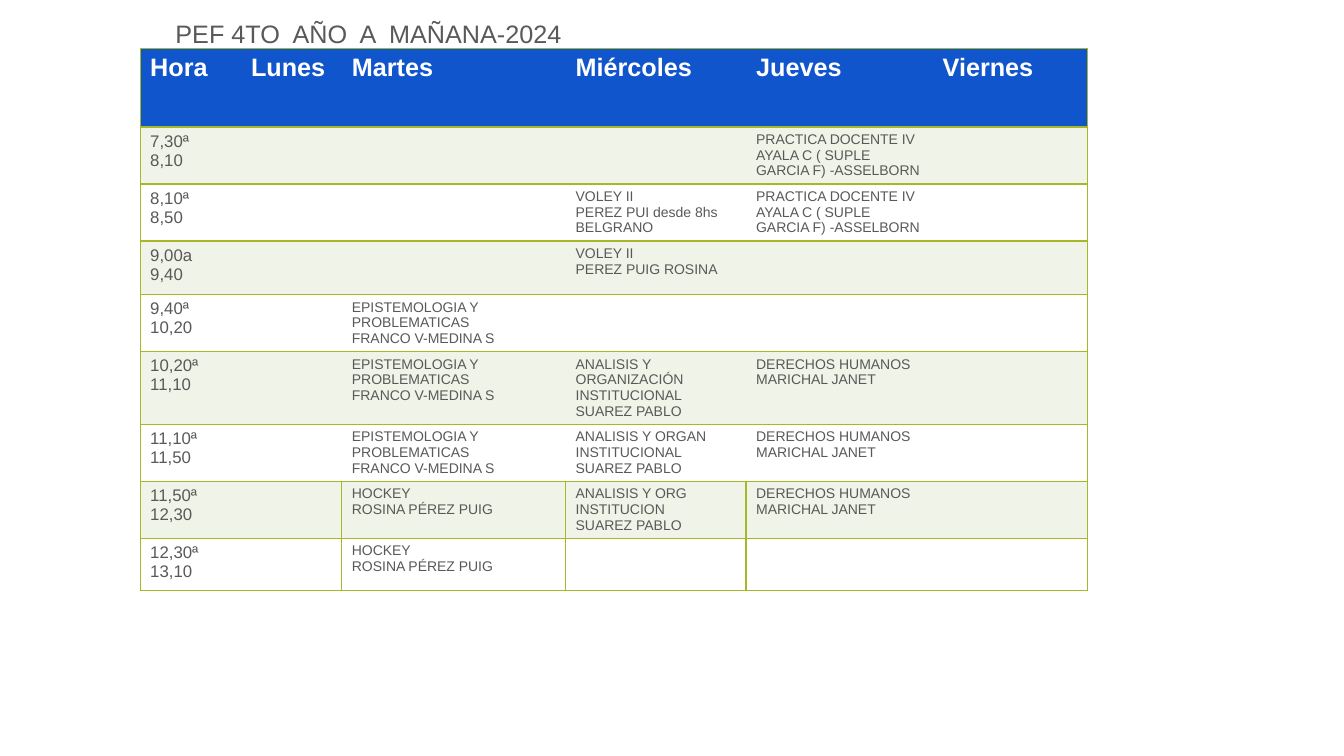
"""Build the weekly timetable slide of a fourth-year class."""
from dataclasses import dataclass

from lxml import etree
from pptx import Presentation
from pptx.dml.color import RGBColor
from pptx.enum.text import MSO_ANCHOR, MSO_AUTO_SIZE, PP_ALIGN
from pptx.oxml.ns import qn
from pptx.util import Inches, Pt

LEFT = PP_ALIGN.LEFT
BOTTOM = MSO_ANCHOR.BOTTOM
FIXED = MSO_AUTO_SIZE.NONE


@dataclass
class Theme:
    font: str = "Arial"
    ink: str = "595959"
    white: str = "FFFFFF"
    head: str = "1155CC"
    band: str = "F0F3E7"
    rule: str = "A6B727"
    large: int = 18
    hour: int = 12
    small: int = 10


class Page:
    def __init__(self, deck, theme):
        self.theme = theme
        self.slide = deck.slides.add_slide(deck.slide_layouts[5])

    def style(self, para, size, color, bold=False):
        para.alignment = LEFT
        font = para.font
        font.name = self.theme.font
        font.size = Pt(size)
        font.bold = bold
        font.color.rgb = RGBColor.from_string(color)

    def title(self, text, left, top, width, height):
        shape = self.slide.shapes.title
        shape.left, shape.top = Inches(left), Inches(top)
        shape.width, shape.height = Inches(width), Inches(height)
        frame = shape.text_frame
        frame.text = text
        frame.word_wrap = True
        frame.auto_size = FIXED
        frame.vertical_anchor = BOTTOM
        para = frame.paragraphs[0]
        para.line_spacing = 0.9
        self.style(para, self.theme.large, self.theme.ink)

    def edges(self, cell, shown):
        props = cell._tc.get_or_add_tcPr()
        for side in "LRTB":
            line = etree.SubElement(props, qn(f"a:ln{side}"), w=str(Pt(1)))
            if side in shown:
                fill = etree.SubElement(line, qn("a:solidFill"))
                etree.SubElement(fill, qn("a:srgbClr"), val=self.theme.rule)
            else:
                etree.SubElement(line, qn("a:noFill"))

    def cell(self, cell, text, size, color, fill, shown, bold):
        self.edges(cell, shown)
        cell.fill.solid()
        cell.fill.fore_color.rgb = RGBColor.from_string(fill)
        cell.text = text
        for para in cell.text_frame.paragraphs:
            self.style(para, size, color, bold)

    def table(self, rows, left, top, widths, heights):
        theme = self.theme
        frame = self.slide.shapes.add_table(
            len(rows), len(widths), Inches(left), Inches(top),
            Inches(sum(widths)), Inches(sum(heights)))
        grid = frame.table
        for col, width in zip(grid.columns, widths):
            col.width = Inches(width)
        for row, height in zip(grid.rows, heights):
            row.height = Inches(height)
        last = len(widths) - 1
        for i, row in enumerate(rows):
            head = i == 0
            fill = theme.head if head else theme.band if i % 2 else theme.white
            ruled = {0, last + 1}
            if i >= len(rows) - 2:
                ruled |= {2, 3, 4}
            for j, text in enumerate(row):
                shown = "TB" + "L" * (j in ruled) + "R" * (j + 1 in ruled)
                size = theme.large if head else theme.small if j else theme.hour
                color = theme.white if head else theme.ink
                self.cell(grid.cell(i, j), text, size, color, fill, shown, head)


DOCENTE = "PRACTICA DOCENTE IV\nAYALA C ( SUPLE GARCIA F) -ASSELBORN"
EPISTEM = "EPISTEMOLOGIA Y PROBLEMATICAS\nFRANCO V-MEDINA S"
RIGHTS = "DERECHOS HUMANOS\nMARICHAL JANET"
HOCKEY = "HOCKEY\nROSINA PÉREZ PUIG"
ROWS = [
    ["Hora", "Lunes", "Martes", "Miércoles", "Jueves", "Viernes"],
    ["7,30ª\n8,10", "", "", "", DOCENTE, ""],
    ["8,10ª\n8,50", "", "",
     "VOLEY II\nPEREZ PUI desde 8hs\nBELGRANO", DOCENTE, ""],
    ["9,00a\n9,40", "", "", "VOLEY II\nPEREZ PUIG ROSINA", "", ""],
    ["9,40ª\n10,20", "", EPISTEM, "", "", ""],
    ["10,20ª\n11,10", "", EPISTEM,
     "ANALISIS Y ORGANIZACIÓN INSTITUCIONAL\nSUAREZ PABLO", RIGHTS, ""],
    ["11,10ª\n11,50", "", EPISTEM,
     "ANALISIS Y ORGAN INSTITUCIONAL\nSUAREZ PABLO", RIGHTS, ""],
    ["11,50ª\n12,30", "", HOCKEY,
     "ANALISIS Y ORG INSTITUCION\nSUAREZ PABLO", RIGHTS, ""],
    ["12,30ª\n13,10", "", HOCKEY, "", "", ""],
]
WIDTHS = [1, 1, 2.22, 1.79, 1.85, 1.54]
HEIGHTS = [0.78, 0.46, 0.53, 0.53, 0.55, 0.55, 0.47, 0.52, 0.52]


def main():
    deck = Presentation()
    deck.slide_width, deck.slide_height = Inches(13.33), Inches(7.5)
    page = Page(deck, Theme())
    page.title("PEF 4TO  AÑO  A  MAÑANA-2024", 1.64, 0, 10.25, 0.54)
    page.table(ROWS, 1.39, 0.48, WIDTHS, HEIGHTS)
    deck.save("out.pptx")


if __name__ == "__main__":
    main()
